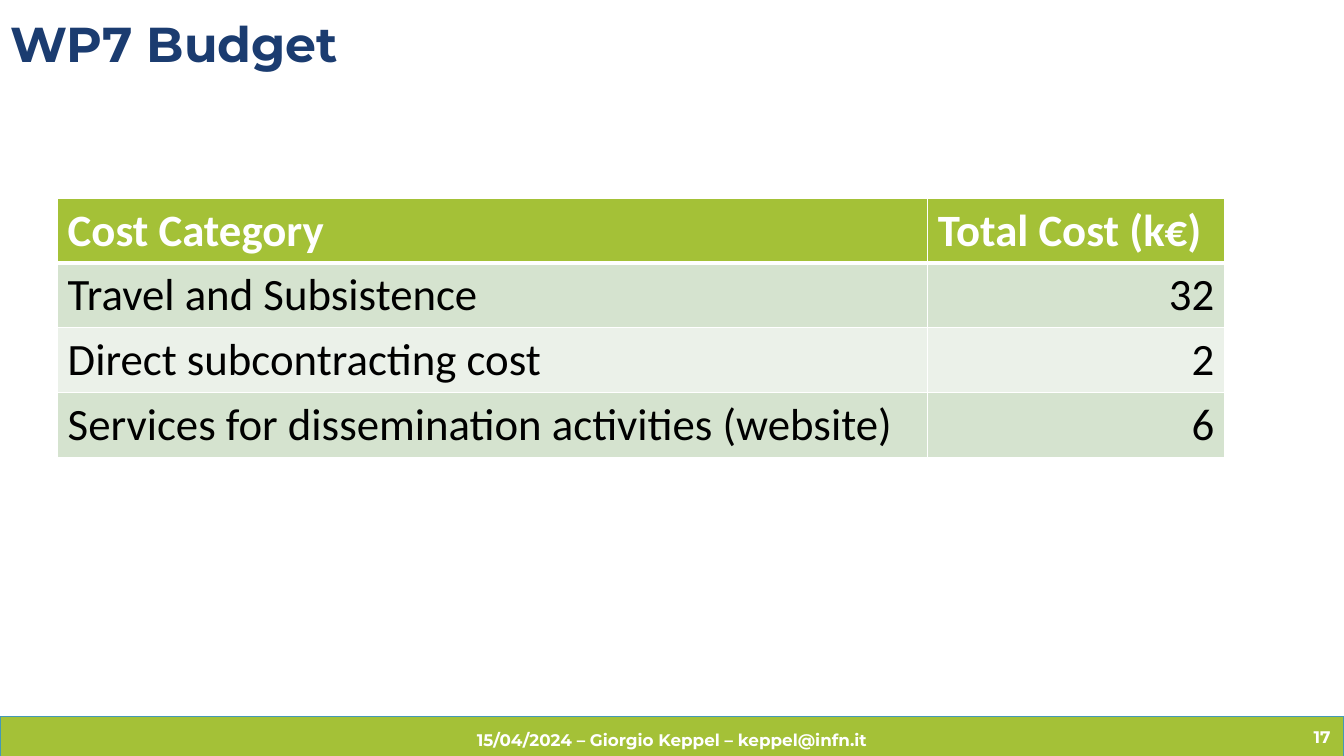
from dataclasses import dataclass

from lxml.etree import SubElement
from pptx import Presentation
from pptx.dml.color import RGBColor
from pptx.enum.shapes import MSO_SHAPE as Shape
from pptx.enum.text import MSO_ANCHOR as Anchor, PP_ALIGN as Align
from pptx.oxml.ns import qn
from pptx.util import Pt

COLORS = {
    "green": "A4C137",
    "outline": "4399B6",
    "navy": "1B3C70",
    "white": "FFFFFF",
    "black": "000000",
    "odd_row": "D5E3CF",
    "even_row": "EBF1E9",
}
HEADING_FONT, TABLE_FONT = "Montserrat", "Calibri"
SLIDE_WIDTH, SLIDE_HEIGHT = 960, 540
COLUMN_WIDTHS = (621.5, 212)
ROW_HEIGHT = 46.25


@dataclass
class Label:
    text: str
    left: float
    top: float
    width: float
    height: float
    align: Align
    anchor: Anchor


@dataclass
class BudgetRow:
    category: str
    cost: str


FOOTER_LABELS = [
    Label("15/04/2024 – Giorgio Keppel – keppel@infn.it",
          0, 517.5, SLIDE_WIDTH, 21.6, Align.CENTER, Anchor.TOP),
    Label("17", 741.5, 512, 216, 28.8, Align.RIGHT, Anchor.MIDDLE),
]
BUDGET = [
    BudgetRow("Cost Category", "Total Cost (k€)"),
    BudgetRow("Travel and Subsistence", "32"),
    BudgetRow("Direct subcontracting cost", "2"),
    BudgetRow("Services for dissemination activities (website)", "6"),
]


def color(name: str) -> RGBColor:
    return RGBColor.from_string(COLORS[name])


def style_text(paragraph, font_name: str, size: float, color_name: str, bold: bool) -> None:
    font = paragraph.font
    font.name, font.size, font.bold = font_name, Pt(size), bold
    font.color.rgb = color(color_name)


def add_title(slide, text: str) -> None:
    title = slide.shapes.title
    title.left, title.top, title.width, title.height = Pt(0), Pt(0), Pt(850), Pt(67)
    frame = title.text_frame
    frame.text, frame.vertical_anchor = text, Anchor.MIDDLE
    paragraph = frame.paragraphs[0]
    paragraph.alignment, paragraph.line_spacing = Align.LEFT, 0.9
    style_text(paragraph, HEADING_FONT, 35, "navy", True)


def add_footer_bar(slide) -> None:
    bar = slide.shapes.add_shape(Shape.RECTANGLE, Pt(0), Pt(511.7), Pt(SLIDE_WIDTH), Pt(28.8))
    bar.shadow.inherit = False
    bar.fill.solid()
    bar.fill.fore_color.rgb = color("green")
    bar.line.color.rgb = color("outline")
    bar.line.width = Pt(1)


def add_label(slide, label: Label) -> None:
    box = slide.shapes.add_textbox(
        Pt(label.left), Pt(label.top), Pt(label.width), Pt(label.height))
    frame = box.text_frame
    frame.word_wrap, frame.vertical_anchor = True, label.anchor
    frame.text = label.text
    paragraph = frame.paragraphs[0]
    paragraph.alignment = label.align
    style_text(paragraph, HEADING_FONT, 12, "white", True)


def set_borders(cell, top: float, bottom: float) -> None:
    properties = cell._tc.get_or_add_tcPr()
    for side, width in (("L", 1), ("R", 1), ("T", top), ("B", bottom)):
        line = SubElement(properties, qn(f"a:ln{side}"), w=str(Pt(width)))
        fill = SubElement(line, qn("a:solidFill"))
        SubElement(fill, qn("a:srgbClr"), val=COLORS["white"])


def add_budget_table(slide) -> None:
    table = slide.shapes.add_table(
        len(BUDGET), len(COLUMN_WIDTHS), Pt(41.2), Pt(141.7),
        Pt(sum(COLUMN_WIDTHS)), Pt(ROW_HEIGHT * len(BUDGET))).table
    for column, width in zip(table.columns, COLUMN_WIDTHS):
        column.width = Pt(width)
    for row_index, row in enumerate(BUDGET):
        header = row_index == 0
        fill_name = "green" if header else "odd_row" if row_index % 2 else "even_row"
        for column_index, text in enumerate((row.category, row.cost)):
            cell = table.cell(row_index, column_index)
            # Thick rule between the header and the first row
            set_borders(cell, top=3 if row_index == 1 else 1, bottom=3 if header else 1)
            cell.fill.solid()
            cell.fill.fore_color.rgb = color(fill_name)
            cell.text = text
            paragraph = cell.text_frame.paragraphs[0]
            is_number = column_index == 1 and not header
            paragraph.alignment = Align.RIGHT if is_number else Align.LEFT
            style_text(paragraph, TABLE_FONT, 32, "white" if header else "black", header)


def main() -> None:
    presentation = Presentation()
    presentation.slide_width, presentation.slide_height = Pt(SLIDE_WIDTH), Pt(SLIDE_HEIGHT)
    slide = presentation.slides.add_slide(presentation.slide_layouts[5])

    # Footer
    add_footer_bar(slide)
    for label in FOOTER_LABELS:
        add_label(slide, label)

    # Title and budget
    add_title(slide, "WP7 Budget")
    add_budget_table(slide)
    presentation.save("out.pptx")


if __name__ == "__main__":
    main()
